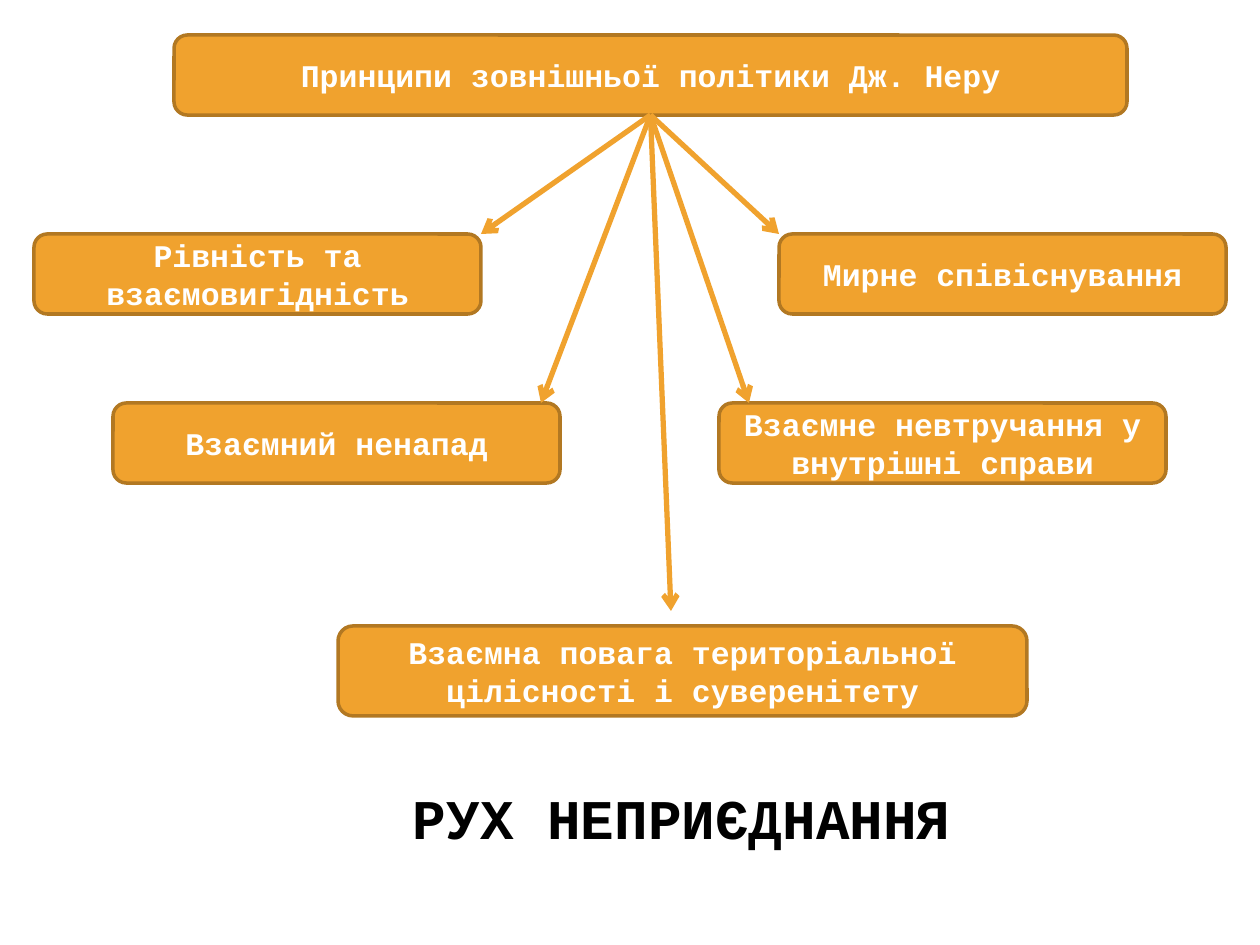
"""Builds a slide on the principles of Nehru's foreign policy."""
from lxml.etree import SubElement
from pptx import Presentation
from pptx.dml.color import RGBColor
from pptx.enum.shapes import MSO_CONNECTOR, MSO_SHAPE
from pptx.enum.text import MSO_ANCHOR, PP_ALIGN
from pptx.oxml.ns import qn
from pptx.util import Emu, Inches, Pt

PX = Inches(1) / 126
FONT = "Courier New"
ORANGE, BROWN, WHITE, BLACK = "F0A22E", "B27822", "FFFFFF", "000000"

HEADING = ("Принципи зовнішньої політики Дж. Неру", (174, 35, 953, 80))
PRINCIPLES = [
    ("Рівність та взаємовигідність", (34, 234, 447, 80), (481, 234)),
    ("Взаємний ненапад", (113, 403, 447, 80), (541, 403)),
    ("Взаємна повага територіальної цілісності і суверенітету",
     (338, 626, 689, 90), (671, 611)),
    ("Взаємне невтручання у внутрішні справи", (719, 403, 447, 80), (749, 403)),
    ("Мирне співіснування", (779, 234, 447, 80), (779, 234)),
]
CONCLUSION = ("РУХ НЕПРИЄДНАННЯ", (181, 777, 1002, 81))


def px(*lengths):
    return [Emu(round(length * PX)) for length in lengths]


def color(value):
    return RGBColor.from_string(value)


def write(shape, text, size, ink, anchor):
    frame = shape.text_frame
    frame.word_wrap = True
    frame.vertical_anchor = anchor
    frame.text = text
    paragraph = frame.paragraphs[0]
    paragraph.alignment = PP_ALIGN.CENTER
    font = paragraph.runs[0].font
    font.name, font.size, font.bold = FONT, Pt(size), True
    font.color.rgb = color(ink)


def add_box(slide, text, place):
    box = slide.shapes.add_shape(MSO_SHAPE.ROUNDED_RECTANGLE, *px(*place))
    box.shadow.inherit = False
    box.fill.solid()
    box.fill.fore_color.rgb = color(ORANGE)
    box.line.color.rgb = color(BROWN)
    box.line.width = Pt(2)
    write(box, text, 18, WHITE, MSO_ANCHOR.MIDDLE)
    return box


def add_arrow(slide, source, tip):
    arrow = slide.shapes.add_connector(MSO_CONNECTOR.STRAIGHT, 0, 0, *px(*tip))
    arrow.begin_connect(source, 2)
    arrow.line.color.rgb = color(ORANGE)
    arrow.line.width = Pt(3)
    properties = arrow._element.spPr
    SubElement(properties.find(qn("a:ln")), qn("a:tailEnd"), type="arrow")
    SubElement(properties, qn("a:effectLst"))


def main():
    deck = Presentation()
    deck.slide_width, deck.slide_height = Inches(10), Inches(7.5)
    slide = deck.slides.add_slide(deck.slide_layouts[5])

    heading = add_box(slide, *HEADING)
    for text, place, tip in PRINCIPLES:
        add_box(slide, text, place)
    for text, place, tip in PRINCIPLES:
        add_arrow(slide, heading, tip)

    text, place = CONCLUSION
    title = slide.shapes.title
    title.left, title.top, title.width, title.height = px(*place)
    write(title, text, 32, BLACK, MSO_ANCHOR.TOP)

    deck.save("out.pptx")


if __name__ == "__main__":
    main()
